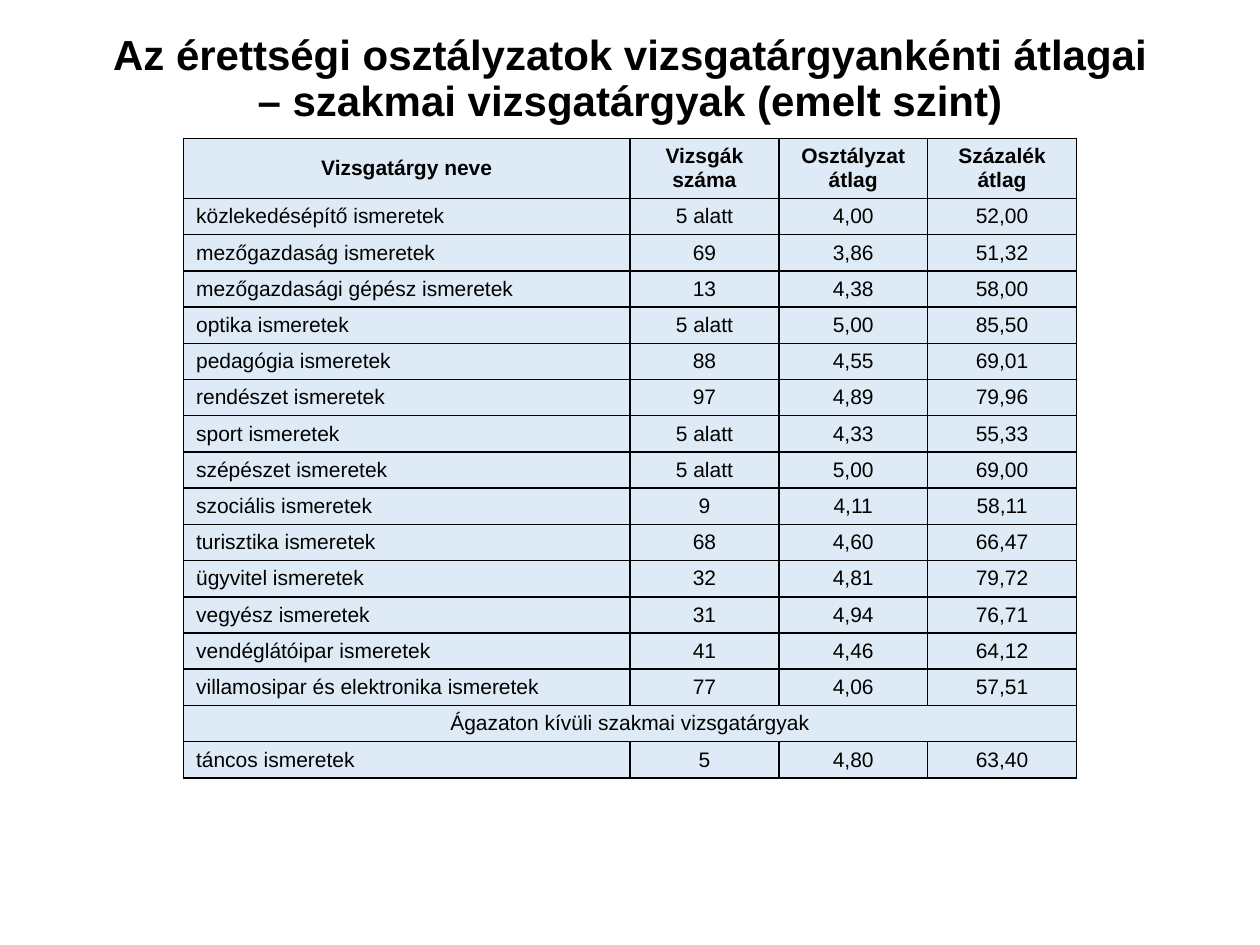
"""Builds the slide with the average grades of the vocational exam subjects."""
from dataclasses import dataclass

from lxml.etree import SubElement
from pptx import Presentation
from pptx.dml.color import RGBColor
from pptx.enum.text import MSO_ANCHOR, MSO_AUTO_SIZE, PP_ALIGN
from pptx.oxml.ns import qn
from pptx.util import Cm, Pt


@dataclass(frozen=True)
class Theme:
    font: str = "Arial"
    text: str = "000000"
    cell: str = "DEEBF7"
    border: str = "000000"
    title_size: int = 24
    table_size: int = 12
    border_width: int = 1


theme = Theme()

HEADER = ["Vizsgatárgy neve", "Vizsgák száma", "Osztályzat átlag", "Százalék átlag"]
SECTION = ["Ágazaton kívüli szakmai vizsgatárgyak"]
ROWS = [
    HEADER,
    ["közlekedésépítő ismeretek", "5 alatt", "4,00", "52,00"],
    ["mezőgazdaság ismeretek", "69", "3,86", "51,32"],
    ["mezőgazdasági gépész ismeretek", "13", "4,38", "58,00"],
    ["optika ismeretek", "5 alatt", "5,00", "85,50"],
    ["pedagógia ismeretek", "88", "4,55", "69,01"],
    ["rendészet ismeretek", "97", "4,89", "79,96"],
    ["sport ismeretek", "5 alatt", "4,33", "55,33"],
    ["szépészet ismeretek", "5 alatt", "5,00", "69,00"],
    ["szociális ismeretek", "9", "4,11", "58,11"],
    ["turisztika ismeretek", "68", "4,60", "66,47"],
    ["ügyvitel ismeretek", "32", "4,81", "79,72"],
    ["vegyész ismeretek", "31", "4,94", "76,71"],
    ["vendéglátóipar ismeretek", "41", "4,46", "64,12"],
    ["villamosipar és elektronika ismeretek", "77", "4,06", "57,51"],
    SECTION,
    ["táncos ismeretek", "5", "4,80", "63,40"],
]
COL_WIDTHS = [9, 3, 3, 3]
ROW_HEIGHTS = [1.21] + [0.73] * (len(ROWS) - 1)


def format_paragraph(p, size, bold, align):
    p.alignment = align
    p.font.name = theme.font
    p.font.size = Pt(size)
    p.font.bold = bold
    p.font.color.rgb = RGBColor.from_string(theme.text)


def add_borders(cell):
    tc_pr = cell._tc.get_or_add_tcPr()
    for side in ("a:lnL", "a:lnR", "a:lnT", "a:lnB"):
        ln = SubElement(tc_pr, qn(side), w=str(Pt(theme.border_width)))
        fill = SubElement(ln, qn("a:solidFill"))
        SubElement(fill, qn("a:srgbClr"), val=theme.border)


prs = Presentation()
prs.slide_width, prs.slide_height = Cm(25.4), Cm(19.05)
s = prs.slides.add_slide(prs.slide_layouts[5])

title = s.shapes.title
title.left, title.top, title.width, title.height = Cm(1.75), Cm(-0.23), Cm(21.9), Cm(3.68)
tf = title.text_frame
tf.text = "Az érettségi osztályzatok vizsgatárgyankénti átlagai – szakmai vizsgatárgyak (emelt szint)"
tf.word_wrap = True
tf.auto_size = MSO_AUTO_SIZE.NONE
tf.vertical_anchor = MSO_ANCHOR.MIDDLE
p = tf.paragraphs[0]
p.line_spacing = 0.9
format_paragraph(p, theme.title_size, True, PP_ALIGN.CENTER)

table = s.shapes.add_table(
    len(ROWS), len(COL_WIDTHS), Cm(3.7), Cm(2.79), Cm(sum(COL_WIDTHS)), Cm(sum(ROW_HEIGHTS))
).table
table.horz_banding = False
for column, width in zip(table.columns, COL_WIDTHS):
    column.width = Cm(width)
for row, height in zip(table.rows, ROW_HEIGHTS):
    row.height = Cm(height)

for i, values in enumerate(ROWS):
    for cell in table.rows[i].cells:
        add_borders(cell)
        cell.fill.solid()
        cell.fill.fore_color.rgb = RGBColor.from_string(theme.cell)
        cell.vertical_anchor = MSO_ANCHOR.MIDDLE
    if values is SECTION:
        table.cell(i, 0).merge(table.cell(i, len(COL_WIDTHS) - 1))
    for j, value in enumerate(values):
        cell = table.cell(i, j)
        cell.text = value
        is_subject = j == 0 and values is not HEADER and values is not SECTION
        align = PP_ALIGN.LEFT if is_subject else PP_ALIGN.CENTER
        format_paragraph(cell.text_frame.paragraphs[0], theme.table_size, values is HEADER, align)

prs.save("out.pptx")
